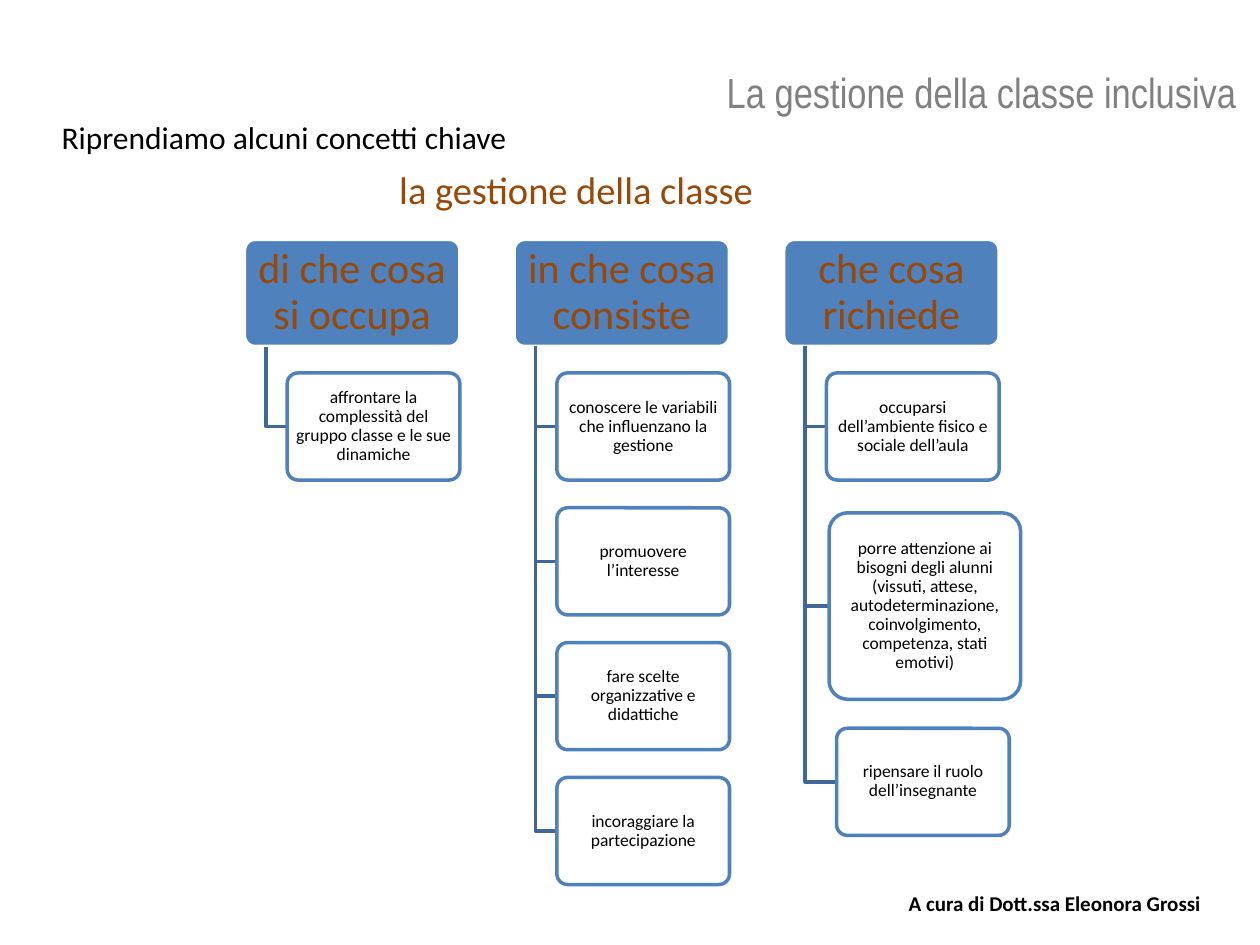
from dataclasses import dataclass

from lxml import etree
from pptx import Presentation
from pptx import util as u
from pptx.dml.color import RGBColor
from pptx.enum import shapes, text
from pptx.oxml.ns import qn


@dataclass(frozen=True)
class Theme:
    accent: str = "4F81BD"
    branch: str = "3F6797"
    brown: str = "984807"
    grey: str = "808080"
    ink: str = "000000"
    paper: str = "FFFFFF"
    title_font: str = "Arial Narrow"
    body_font: str = "Calibri"
    heading_size: int = 24
    topic_size: int = 22
    intro_size: int = 18
    credit_size: int = 12
    idea_size: int = 10
    line_width: int = 2


def write(frame, words, size, color, font, align=text.PP_ALIGN.LEFT, bold=False,
          anchor=text.MSO_ANCHOR.TOP, insets=(0.1, 0.05, 0.1, 0.05),
          wrap=True, spacing=None, fit=text.MSO_AUTO_SIZE.NONE):
    frame.auto_size = fit
    frame.word_wrap = wrap
    frame.vertical_anchor = anchor
    (frame.margin_left, frame.margin_top,
     frame.margin_right, frame.margin_bottom) = map(u.Inches, insets)
    paragraph = frame.paragraphs[0]
    paragraph.alignment = align
    paragraph.line_spacing = spacing
    run = paragraph.add_run()
    run.text = words
    run.font.size = u.Pt(size)
    run.font.name = font
    run.font.bold = bold
    run.font.color.rgb = RGBColor.from_string(color)


class ConceptSlide:
    def __init__(self, deck, theme):
        self.theme = theme
        self.slide = deck.slides.add_slide(deck.slide_layouts[5])

    def title(self, words, left, top, width, height):
        heading = self.slide.shapes.title
        heading.left, heading.top = u.Inches(left), u.Inches(top)
        heading.width, heading.height = u.Inches(width), u.Inches(height)
        write(heading.text_frame, words, self.theme.heading_size, self.theme.grey,
              self.theme.title_font, align=text.PP_ALIGN.RIGHT,
              anchor=text.MSO_ANCHOR.MIDDLE, insets=(0, 0, 0, 0))

    def label(self, words, left, top, width, height, size, color, **style):
        caption = self.slide.shapes.add_textbox(
            *map(u.Inches, (left, top, width, height)))
        write(caption.text_frame, words, size, color, self.theme.body_font, **style)

    def box(self, words, left, top, width, height, fill, line, size, color, insets):
        card = self.slide.shapes.add_shape(
            shapes.MSO_SHAPE.ROUNDED_RECTANGLE,
            *map(u.Inches, (left, top, width, height)))
        card.adjustments[0] = 0.1
        card.fill.solid()
        card.fill.fore_color.rgb = RGBColor.from_string(fill)
        self.outline(card, line)
        write(card.text_frame, words, size, color, self.theme.body_font,
              align=text.PP_ALIGN.CENTER, anchor=text.MSO_ANCHOR.MIDDLE,
              insets=insets, spacing=0.9)
        return card

    def header(self, words, left, top, width, height):
        self.box(words, left, top, width, height, self.theme.accent,
                 self.theme.paper, self.theme.heading_size, self.theme.brown,
                 (0.05, 0.03, 0.05, 0.03))

    def idea(self, words, left, top, width, height):
        card = self.box(words, left, top, width, height, self.theme.paper,
                        self.theme.accent, self.theme.idea_size, self.theme.ink,
                        (0.02, 0.01, 0.02, 0.01))
        tint = card.fill._xPr.find(qn("a:solidFill"))[0]
        etree.SubElement(tint, qn("a:alpha")).set("val", "90000")

    def elbow(self, left, top, right, bottom):
        x1, y1, x2, y2 = map(u.Inches, (left, top, right, bottom))
        builder = self.slide.shapes.build_freeform(x1, y1)
        builder.add_line_segments([(x1, y2), (x2, y2)], close=False)
        branch = builder.convert_to_shape()
        branch.fill.background()
        self.outline(branch, self.theme.branch)

    def outline(self, shape, color):
        shape.shadow.inherit = False
        shape.line.color.rgb = RGBColor.from_string(color)
        shape.line.width = u.Pt(self.theme.line_width)


COLUMN_LEFT, COLUMN_STEP = 1.94, 2.14
HEADER_TOP, HEADER_WIDTH, BOX_HEIGHT = 1.9, 1.71, 0.85
IDEA_TOP, IDEA_STEP, IDEA_WIDTH = 2.96, 1.07, 1.37
SPINE_INDENT, IDEA_INDENT = 0.17, 0.34

COLUMNS = [
    ("di che cosa si occupa", [
        ("affrontare la complessità del gruppo classe e le sue dinamiche", {}),
    ]),
    ("in che cosa consiste", [
        ("conoscere le variabili che influenzano la gestione", {}),
        ("promuovere l’interesse", {}),
        ("fare scelte organizzative e didattiche", {}),
        ("incoraggiare la partecipazione", {}),
    ]),
    ("che cosa richiede", [
        ("occuparsi dell’ambiente fisico e sociale dell’aula", {}),
        ("porre attenzione ai bisogni degli alunni (vissuti, attese, "
         "autodeterminazione, coinvolgimento, competenza, stati emotivi)",
         {"indent": 0.36, "top": 4.07, "width": 1.52, "height": 1.48}),
        ("ripensare il ruolo dell’insegnante", {"indent": 0.42, "top": 5.78}),
    ]),
]


def main():
    deck = Presentation()
    deck.slide_width, deck.slide_height = u.Inches(10), u.Inches(7.5)
    theme = Theme()
    page = ConceptSlide(deck, theme)

    page.title("La gestione della classe inclusiva", 1.85, 0.14, 7.96, 1.17)
    page.label("la gestione della classe", 3.07, 1.32, 3.35, 0.58,
               theme.topic_size, theme.brown, insets=(0.1, 0, 0.05, 0))

    for column, (heading, ideas) in enumerate(COLUMNS):
        left = COLUMN_LEFT + column * COLUMN_STEP
        page.header(heading, left, HEADER_TOP, HEADER_WIDTH, BOX_HEIGHT)
        for row, (idea, place) in enumerate(ideas):
            idea_left = left + place.get("indent", IDEA_INDENT)
            top = place.get("top", IDEA_TOP + row * IDEA_STEP)
            height = place.get("height", BOX_HEIGHT)
            page.elbow(left + SPINE_INDENT, HEADER_TOP + BOX_HEIGHT,
                       idea_left, top + height / 2)
            page.idea(idea, idea_left, top, place.get("width", IDEA_WIDTH), height)

    page.label("A cura di Dott.ssa Eleonora Grossi", 7.07, 7.02, 2.56, 0.3,
               theme.credit_size, theme.ink, align=text.PP_ALIGN.RIGHT, bold=True,
               wrap=False, fit=text.MSO_AUTO_SIZE.SHAPE_TO_FIT_TEXT)
    page.label("Riprendiamo alcuni concetti chiave", 0.39, 0.89, 3.78, 0.4,
               theme.intro_size, theme.ink,
               wrap=False, fit=text.MSO_AUTO_SIZE.SHAPE_TO_FIT_TEXT)

    deck.save("out.pptx")


if __name__ == "__main__":
    main()
